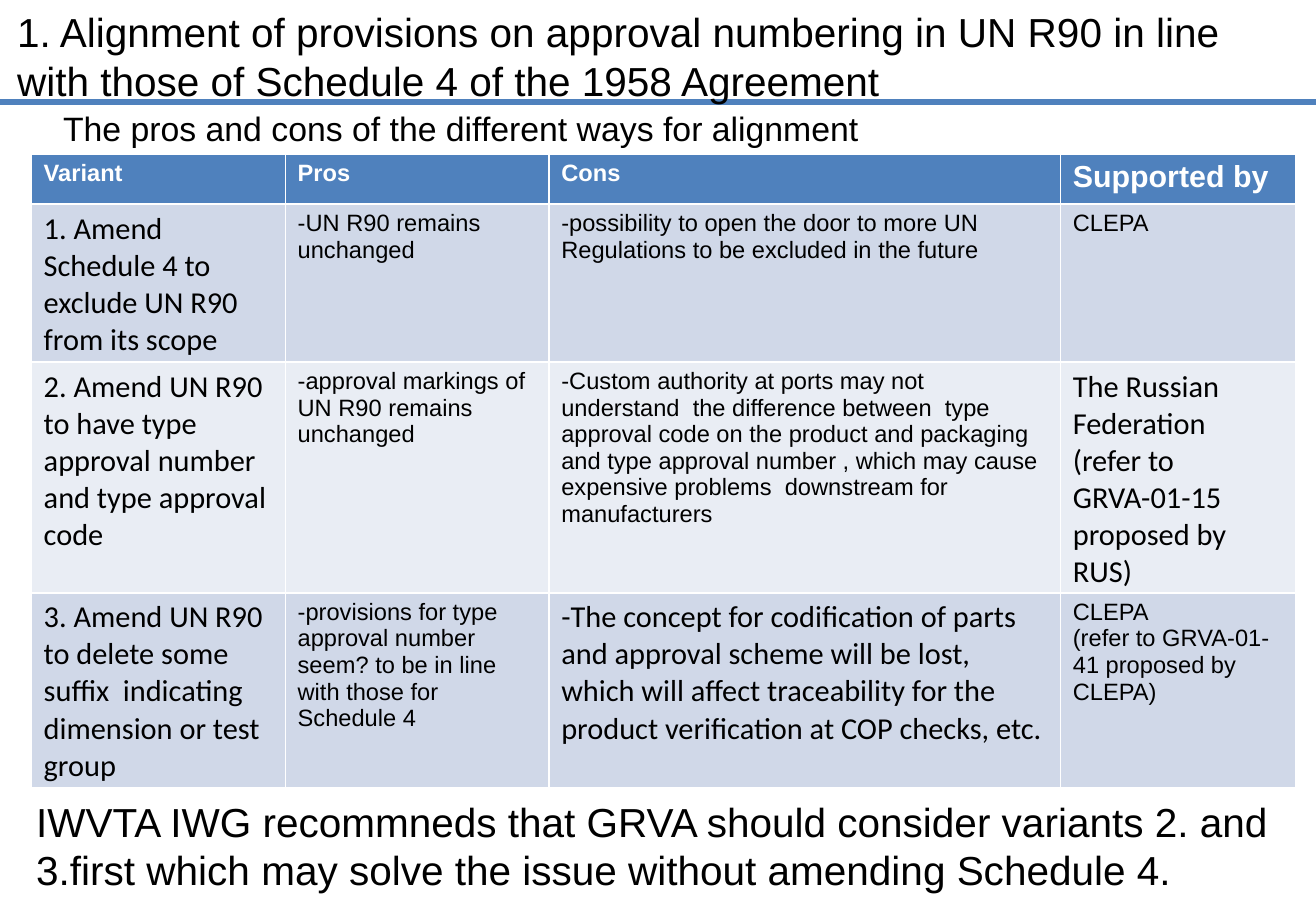
from lxml.etree import SubElement
from pptx import Presentation
from pptx.dml.color import RGBColor
from pptx.enum.shapes import MSO_CONNECTOR
from pptx.enum.text import MSO_ANCHOR, PP_ALIGN
from pptx.oxml.ns import qn
from pptx.util import Inches, Pt

BLUE = RGBColor(0x4F, 0x81, 0xBD)
BAND_DARK = RGBColor(0xD0, 0xD8, 0xE8)
BAND_LIGHT = RGBColor(0xE9, 0xED, 0xF4)
BLACK = RGBColor(0, 0, 0)
WHITE = RGBColor(0xFF, 0xFF, 0xFF)

TITLE = ("1. Alignment of provisions on approval numbering in UN R90 in line "
         "with those of Schedule 4 of the 1958 Agreement")
SUBTITLE = "The pros and cons of the different ways for alignment"
RECOMMENDATION = ("IWVTA IWG recommneds that GRVA should consider variants 2. and "
                  "3.first which may solve the issue without amending Schedule 4.")

HEADINGS = ["Variant", "Pros", "Cons", "Supported by"]
VARIANTS = [
    ["1. Amend Schedule 4 to exclude UN R90 from its scope",
     "-UN R90 remains unchanged",
     "-possibility to open the door to more UN Regulations to be excluded in the future",
     "CLEPA"],
    ["2. Amend UN R90 to have type approval number and type approval code",
     "-approval markings of UN R90 remains unchanged",
     "-Custom authority at ports may not understand  the difference between  type "
     "approval code on the product and packaging  and type approval number , which "
     "may cause expensive problems  downstream for manufacturers",
     "The Russian Federation\n(refer to GRVA-01-15 proposed by RUS)"],
    ["3. Amend UN R90 to delete some suffix  indicating dimension or test group",
     "-provisions for type approval number seem? to be in line with those for Schedule 4",
     "-The concept for codification of parts and approval scheme will be lost, which "
     "will affect traceability for the product verification at COP checks, etc.",
     "CLEPA\n(refer to GRVA-01-41 proposed by CLEPA)"],
]
COLUMN_WIDTHS = [2.09, 2.17, 4.21, 1.93]
ROW_HEIGHTS = [0.41, 1.29, 1.9, 1.6]
LARGE_CELLS = {(1, 0), (2, 0), (2, 3), (3, 0), (3, 2)}

HEADING = {"name": "Arial", "size": Pt(14), "bold": True}
LAST_HEADING = {**HEADING, "size": Pt(18)}
SMALL = {"name": "Arial", "size": Pt(14), "bold": False}
LARGE = {"name": "Calibri", "size": Pt(18), "bold": False}
HEADLINE = {"name": "Arial", "size": Pt(24)}
SUBHEAD = {"name": "Arial", "size": Pt(20)}


def write(frame, text, style, color):
    frame.text = text
    for paragraph in frame.paragraphs:
        paragraph.alignment = PP_ALIGN.LEFT
        for key, value in style.items():
            setattr(paragraph.font, key, value)
        paragraph.font.color.rgb = color


def place(shape, left, top, width, height):
    shape.left, shape.top = Inches(left), Inches(top)
    shape.width, shape.height = Inches(width), Inches(height)


def add_statement(slide, text, style, *box):
    statement = slide.shapes.add_textbox(*map(Inches, box))
    statement.text_frame.word_wrap = True
    write(statement.text_frame, text, style, BLACK)


def add_title(slide):
    title = slide.shapes.title
    place(title, 0.04, 0.01, 10.69, 0.91)
    title.text_frame.vertical_anchor = MSO_ANCHOR.TOP
    write(title.text_frame, TITLE, HEADLINE, BLACK)
    rule = slide.shapes.add_connector(
        MSO_CONNECTOR.STRAIGHT, 0, Inches(0.84), Inches(10.83), Inches(0.84))
    rule.line.color.rgb = BLUE
    rule.line.width = Pt(3)
    SubElement(rule._element.spPr, qn("a:effectLst"))
    title._element.addprevious(rule._element)


def cell_style(row, column):
    if row == 0:
        return LAST_HEADING if column == len(HEADINGS) - 1 else HEADING
    return LARGE if (row, column) in LARGE_CELLS else SMALL


def add_comparison(slide):
    rows = [HEADINGS, *VARIANTS]
    comparison = slide.shapes.add_table(
        len(rows), len(HEADINGS), Inches(0.26), Inches(1.27),
        Inches(sum(COLUMN_WIDTHS)), Inches(sum(ROW_HEIGHTS))).table
    for column, width in zip(comparison.columns, COLUMN_WIDTHS):
        column.width = Inches(width)
    for row, height in zip(comparison.rows, ROW_HEIGHTS):
        row.height = Inches(height)
    for r, texts in enumerate(rows):
        band = BLUE if r == 0 else BAND_DARK if r % 2 else BAND_LIGHT
        for c, text in enumerate(texts):
            cell = comparison.cell(r, c)
            cell.fill.solid()
            cell.fill.fore_color.rgb = band
            write(cell.text_frame, text, cell_style(r, c), BLACK if r else WHITE)


def main():
    deck = Presentation()
    deck.slide_width, deck.slide_height = Inches(10.83), Inches(7.5)
    slide = deck.slides.add_slide(deck.slide_layouts[5])
    add_title(slide)
    add_statement(slide, SUBTITLE, SUBHEAD, 0.42, 0.84, 8.11, 0.44)
    add_comparison(slide)
    add_statement(slide, RECOMMENDATION, HEADLINE, 0.2, 6.51, 10.46, 0.91)
    deck.save("out.pptx")


if __name__ == "__main__":
    main()
